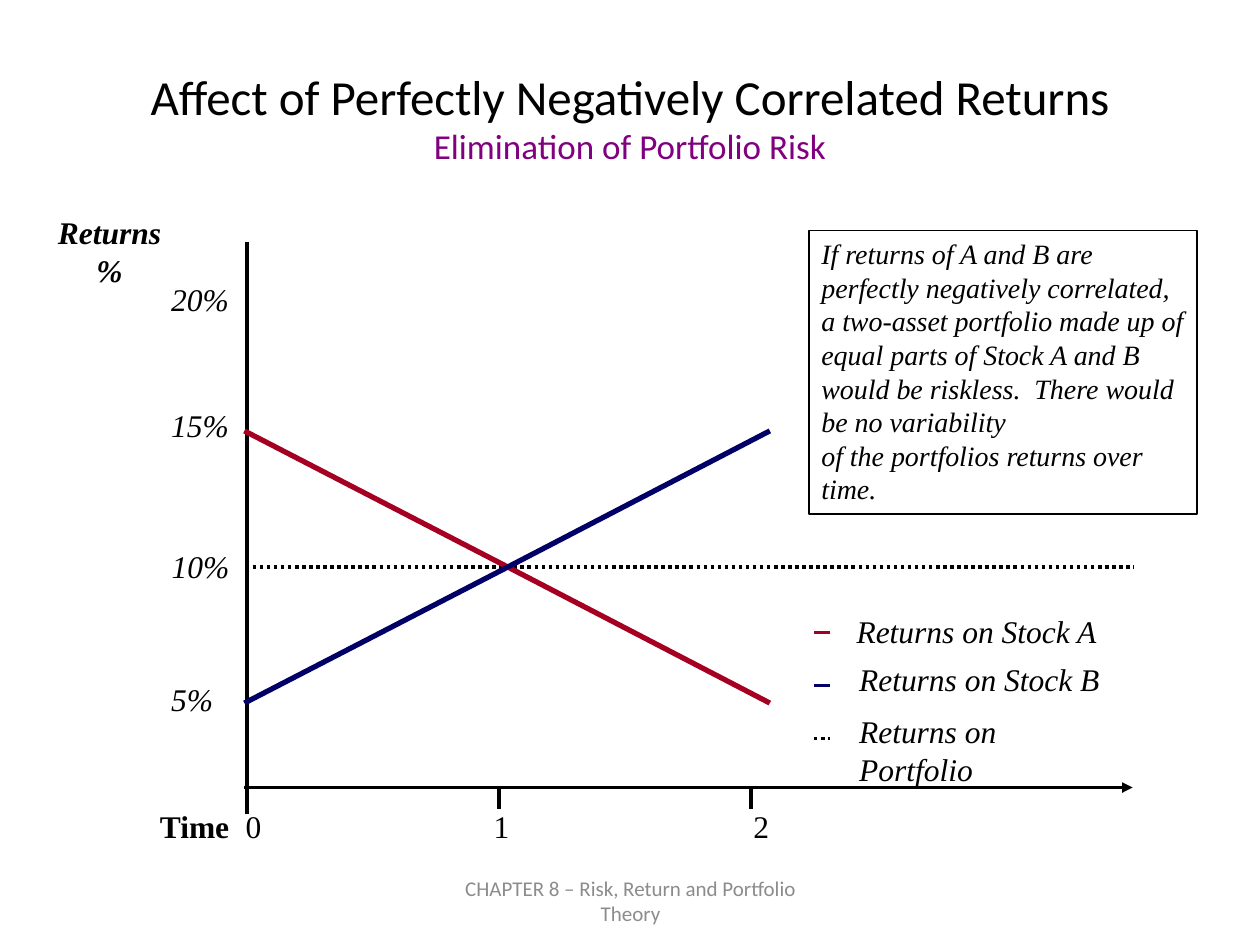
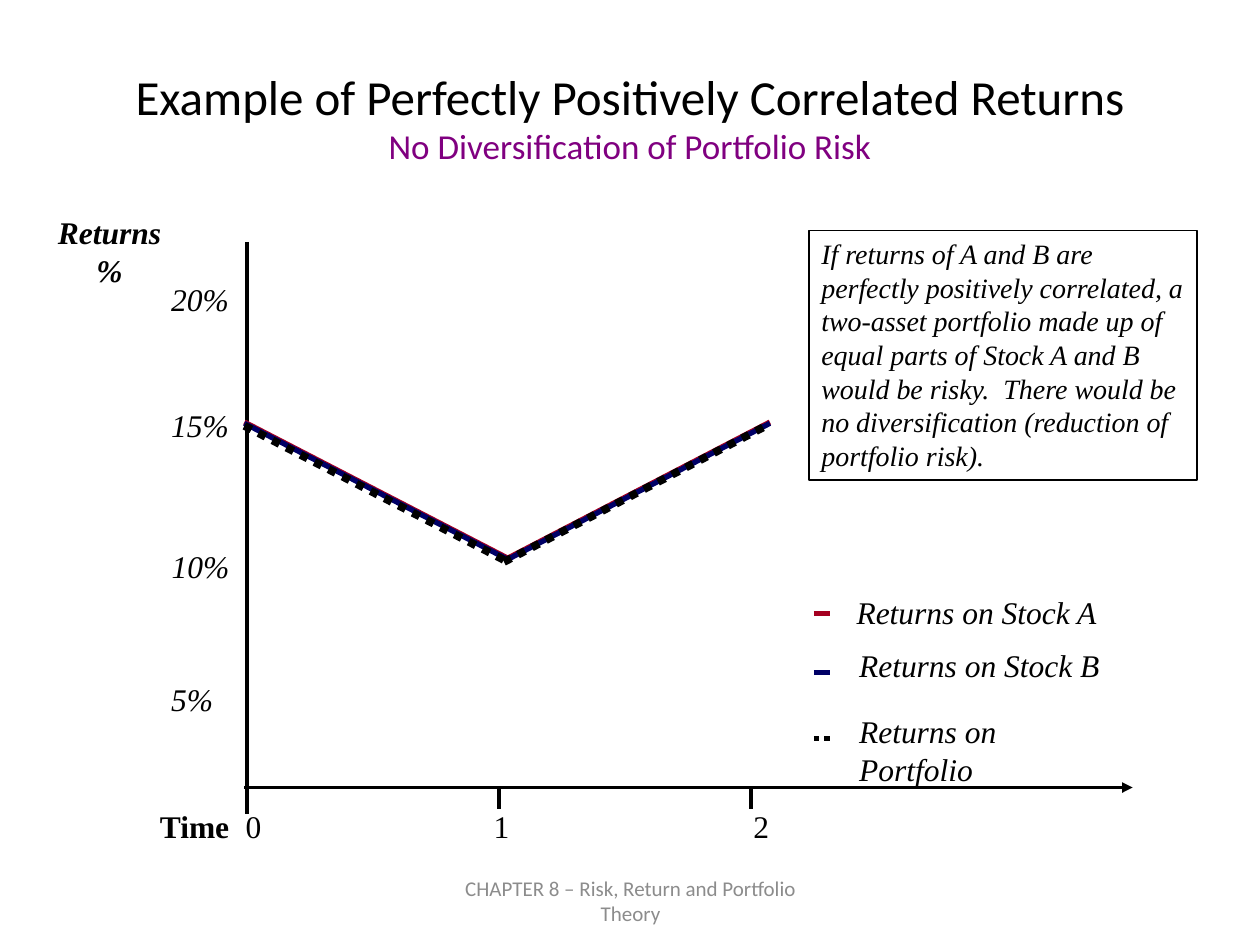
from copy import deepcopy
from dataclasses import dataclass
from typing import Optional

from lxml.etree import SubElement
from pptx import Presentation
from pptx.dml.color import RGBColor
from pptx.enum.dml import MSO_LINE_DASH_STYLE as Dash
from pptx.enum.shapes import MSO_CONNECTOR as Connector, MSO_SHAPE as Shape
from pptx.enum.text import MSO_ANCHOR as Anchor, MSO_AUTO_SIZE as AutoSize, PP_ALIGN as Align
from pptx.oxml.ns import qn
from pptx.util import Pt

EMU_PER_PX = 9144

BLACK = RGBColor(0x00, 0x00, 0x00)
PURPLE = RGBColor(0x80, 0x00, 0x80)
GREY = RGBColor(0x8C, 0x8C, 0x8C)
STOCK_A_RED = RGBColor(0xA5, 0x00, 0x21)
STOCK_B_BLUE = RGBColor(0x00, 0x00, 0x66)

SANS = "Calibri"
SERIF = "Times New Roman"
FOOTER = "CHAPTER 8 – Risk, Return and Portfolio Theory"

AXIS_X, AXIS_Y = 196, 625
PERIOD_WIDTH = 200
TIME_TABS = (68, 265, 471)


@dataclass(frozen=True)
class Box:
    left: int
    top: int
    width: int
    height: int


@dataclass(frozen=True)
class Line:
    x1: int
    y1: int
    x2: int
    y2: int


@dataclass(frozen=True)
class Label:
    text: str
    box: Box
    align: Align = Align.LEFT
    bold: bool = False


@dataclass(frozen=True)
class Series:
    label: Label
    color: RGBColor
    key_y: int
    key_weight: float
    lines: tuple[Line, ...]
    line_weight: float
    dash: Optional[Dash] = None


@dataclass(frozen=True)
class ReturnsSlide:
    title: str
    subtitle: str
    note: str
    note_height: int
    series: tuple[Series, ...]


AXIS_LABELS = (
    Label("Returns\n%", Box(36, 164, 102, 70), Align.CENTER, bold=True),
    Label("20%", Box(126, 217, 66, 40)),
    Label("15%", Box(126, 317, 66, 40)),
    Label("10%", Box(126, 429, 66, 40), Align.RIGHT),
    Label("5%", Box(126, 535, 53, 40), Align.RIGHT),
)


def stock_a_label(top: int) -> Label:
    return Label("Returns on Stock A", Box(670, top, 211, 40))


def stock_b_label(top: int) -> Label:
    return Label("Returns on Stock B", Box(672, top, 211, 40))


PORTFOLIO_LABEL = Label("Returns on Portfolio", Box(672, 560, 225, 40))

SLIDES = (
    ReturnsSlide(
        "Affect of Perfectly Negatively Correlated Returns",
        "Elimination of Portfolio Risk",
        "If returns of A and B are perfectly negatively correlated, a two-asset portfolio "
        "made up of equal parts of Stock A and B would be riskless.  There would be no "
        "variability\nof the portfolios returns over time.",
        225,
        (
            Series(PORTFOLIO_LABEL, BLACK, 586, 2,
                   (Line(195, 450, 900, 450),), 2, Dash.ROUND_DOT),
            Series(stock_a_label(481), STOCK_A_RED, 502, 2,
                   (Line(194, 342, 403, 450), Line(403, 450, 611, 558)), 3),
            Series(stock_b_label(519), STOCK_B_BLUE, 544, 2,
                   (Line(194, 558, 403, 450), Line(403, 450, 611, 342)), 3),
        ),
    ),
    ReturnsSlide(
        "Example of Perfectly Positively Correlated Returns",
        "No Diversification of Portfolio Risk",
        "If returns of A and B are perfectly positively correlated, a two-asset portfolio "
        "made up of equal parts of Stock A and B would be risky.  There would be no "
        "diversification (reduction of portfolio risk).",
        198,
        (
            Series(stock_a_label(466), STOCK_A_RED, 487, 3,
                   (Line(194, 335, 403, 443), Line(403, 443, 611, 335)), 3),
            Series(stock_b_label(508), STOCK_B_BLUE, 534, 3,
                   (Line(194, 336, 403, 444), Line(403, 444, 611, 336)), 3),
            Series(PORTFOLIO_LABEL, BLACK, 586, 3,
                   (Line(194, 338, 403, 446), Line(400, 446, 608, 338)), 4.5,
                   Dash.ROUND_DOT),
        ),
    ),
)


def px(length: int) -> int:
    return length * EMU_PER_PX


def bounds(box: Box) -> tuple[int, ...]:
    return px(box.left), px(box.top), px(box.width), px(box.height)


def style_run(run, size: int, face: str = SERIF, color: RGBColor = BLACK,
              bold: bool = False, italic: bool = False) -> None:
    run.font.size = Pt(size)
    run.font.name = face
    run.font.color.rgb = color
    run.font.bold = bold
    run.font.italic = italic


def draw_line(slide, line: Line, color: RGBColor = BLACK, weight: float = 2,
              dash: Optional[Dash] = None, arrow: bool = False) -> None:
    connector = slide.shapes.add_connector(
        Connector.STRAIGHT, px(line.x1), px(line.y1), px(line.x2), px(line.y2))
    connector.line.color.rgb = color
    connector.line.width = Pt(weight)
    if dash is not None:
        connector.line.dash_style = dash
    properties = connector._element.spPr
    if arrow:
        SubElement(properties.find(qn("a:ln")), qn("a:tailEnd"), type="triangle")
    SubElement(properties, qn("a:effectLst"))


def draw_label(slide, label: Label) -> None:
    frame = slide.shapes.add_textbox(*bounds(label.box)).text_frame
    frame.text = label.text
    frame.word_wrap = False
    frame.auto_size = AutoSize.SHAPE_TO_FIT_TEXT
    for paragraph in frame.paragraphs:
        paragraph.alignment = label.align
        for run in paragraph.runs:
            style_run(run, 18, bold=label.bold, italic=True)


def draw_title(slide, title: str, subtitle: str) -> None:
    heading = slide.shapes.title
    heading.left, heading.top, heading.width, heading.height = bounds(Box(50, 30, 900, 125))
    frame = heading.text_frame
    frame.text = f"{title}\v{subtitle}"
    frame.vertical_anchor = Anchor.MIDDLE
    paragraph = frame.paragraphs[0]
    paragraph.alignment = Align.CENTER
    title_run, subtitle_run = paragraph.runs
    style_run(title_run, 28, SANS)
    style_run(subtitle_run, 20, SANS, PURPLE)
    line_break = paragraph._p.find(qn("a:br"))
    line_break.append(deepcopy(title_run._r.find(qn("a:rPr"))))


def draw_footer(slide) -> None:
    frame = slide.shapes.add_textbox(*bounds(Box(342, 695, 317, 40))).text_frame
    frame.text = FOOTER
    frame.word_wrap = True
    frame.vertical_anchor = Anchor.MIDDLE
    paragraph = frame.paragraphs[0]
    paragraph.alignment = Align.CENTER
    style_run(paragraph.runs[0], 12, SANS, GREY)


def draw_time_labels(slide) -> None:
    frame = slide.shapes.add_textbox(*bounds(Box(117, 636, 742, 40))).text_frame
    frame.word_wrap = True
    paragraph = frame.paragraphs[0]
    tab_list = SubElement(paragraph._p.get_or_add_pPr(), qn("a:tabLst"))
    for position in TIME_TABS:
        SubElement(tab_list, qn("a:tab"), pos=str(px(position)), algn="l")
    paragraph.text = "Time \t"
    style_run(paragraph.runs[0], 18, bold=True)
    periods = paragraph.add_run()
    periods.text = "0\t1\t2"
    style_run(periods, 18)


def draw_axes(slide) -> None:
    draw_line(slide, Line(AXIS_X, 192, AXIS_X, 646))
    draw_line(slide, Line(194, AXIS_Y, 899, AXIS_Y), arrow=True)
    for period in (1, 2):
        tick_x = AXIS_X + period * PERIOD_WIDTH
        draw_line(slide, Line(tick_x, AXIS_Y, tick_x, AXIS_Y + 17), weight=2.25)
    draw_time_labels(slide)
    for label in AXIS_LABELS:
        draw_label(slide, label)


def draw_note(slide, text: str, height: int) -> None:
    note = slide.shapes.add_shape(Shape.RECTANGLE, *bounds(Box(642, 183, 308, height)))
    note.shadow.inherit = False
    note.fill.background()
    note.line.color.rgb = BLACK
    note.line.width = Pt(1)
    frame = note.text_frame
    frame.text = text
    frame.word_wrap = True
    frame.vertical_anchor = Anchor.TOP
    for paragraph in frame.paragraphs:
        paragraph.alignment = Align.LEFT
        style_run(paragraph.runs[0], 16, italic=True)


def draw_series(slide, series: Series) -> None:
    for line in series.lines:
        draw_line(slide, line, series.color, series.line_weight, series.dash)
    key = Line(646, series.key_y, 659, series.key_y)
    draw_line(slide, key, series.color, series.key_weight, series.dash)
    draw_label(slide, series.label)


def main() -> None:
    deck = Presentation()
    deck.slide_width, deck.slide_height = px(1000), px(750)
    title_only = deck.slide_layouts[5]
    for content in SLIDES:
        slide = deck.slides.add_slide(title_only)
        draw_title(slide, content.title, content.subtitle)
        draw_footer(slide)
        draw_axes(slide)
        draw_note(slide, content.note, content.note_height)
        for series in content.series:
            draw_series(slide, series)
    deck.save("out.pptx")


if __name__ == "__main__":
    main()
